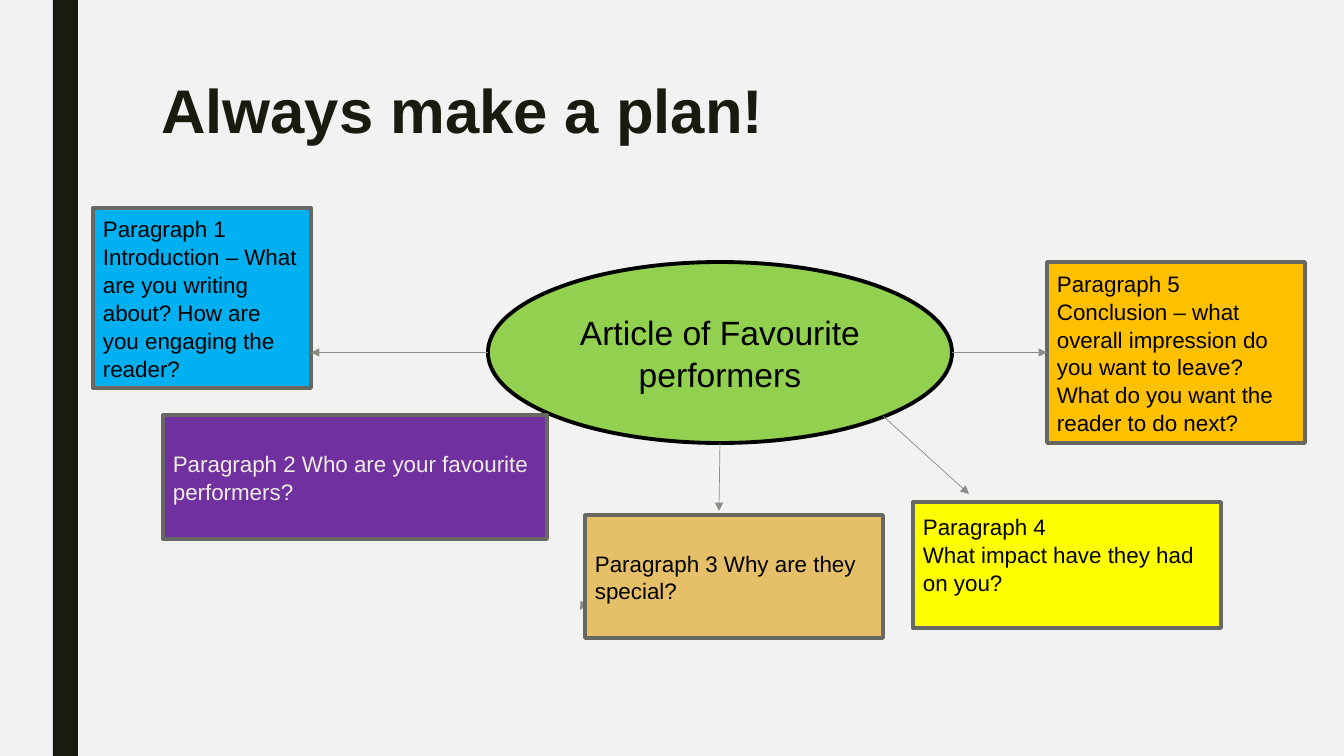
from pptx import Presentation
from pptx import util as u
from pptx.dml.color import RGBColor
from pptx.enum import shapes, text
from pptx.oxml.ns import qn
from lxml import etree

PAPER = RGBColor(0xF2, 0xF2, 0xF2)
DARK = RGBColor(0x19, 0x1B, 0x0E)
BLACK = RGBColor(0, 0, 0)
CREAM = RGBColor(0xEF, 0xED, 0xE3)
EDGE = RGBColor(0x68, 0x68, 0x63)
GREY = RGBColor(0x8C, 0x8D, 0x86)
GREEN = RGBColor(0x92, 0xD0, 0x50)
PURPLE = RGBColor(0x70, 0x30, 0xA0)
YELLOW = RGBColor(0xFF, 0xFF, 0)
TAN = RGBColor(0xE6, 0xC0, 0x69)
BLUE = RGBColor(0, 0xB0, 0xF0)
ORANGE = RGBColor(0xFF, 0xC0, 0)

RECT = shapes.MSO_SHAPE.RECTANGLE
OVAL = shapes.MSO_SHAPE.OVAL
LEFT, MID = text.PP_ALIGN.LEFT, text.PP_ALIGN.CENTER
TOP, CENTRE = text.MSO_ANCHOR.TOP, text.MSO_ANCHOR.MIDDLE

HUB = (488, 262, 464, 181)
NOTES = [
    ((163, 415, 384, 124), PURPLE, CREAM, CENTRE,
     "Paragraph 2 Who are your favourite performers?"),
    ((913, 502, 308, 126), YELLOW, BLACK, TOP,
     "Paragraph 4\nWhat impact have they had on you?"),
    ((585, 515, 298, 123), TAN, BLACK, CENTRE,
     "Paragraph 3 Why are they special?"),
    ((93, 208, 218, 180), BLUE, BLACK, CENTRE,
     "Paragraph 1\nIntroduction – What are you writing about? "
     "How are you engaging the reader?"),
    ((1047, 262, 258, 181), ORANGE, BLACK, CENTRE,
     "Paragraph 5\nConclusion – what overall impression do you want to leave? "
     "What do you want the reader to do next?"),
]


def px(*nums):
    """Turn whole pixels into EMU."""
    return [u.Inches(n / 100.8) for n in nums]


def style(frame, size, ink, align, gap, bold=False):
    """Format every paragraph and run of a text frame."""
    for par in frame.paragraphs:
        par.alignment = align
        par.line_spacing = gap
        for run in par.runs:
            run.font.name = "Arial"
            run.font.size = u.Pt(size)
            run.font.bold = bold
            run.font.color.rgb = ink


def block(slide, box, fill, edge=None, kind=RECT):
    """Draw a filled shape with an optional outline."""
    shape = slide.shapes.add_shape(kind, *px(*box))
    shape.shadow.inherit = False
    shape.fill.solid()
    shape.fill.fore_color.rgb = fill
    if edge is None:
        shape.line.fill.background()
    else:
        shape.line.color.rgb = edge
        shape.line.width = u.Pt(2.75)
    return shape


def label(shape, words, size, ink, align=LEFT, anchor=CENTRE):
    """Write text into a shape."""
    frame = shape.text_frame
    frame.word_wrap = True
    frame.vertical_anchor = anchor
    if anchor == TOP:
        frame.margin_top = px(10)[0]
    frame.text = words
    style(frame, size, ink, align, 1.04)


def arrow(slide, start, end):
    """Draw a thin grey arrow between two points."""
    line = slide.shapes.add_connector(
        shapes.MSO_CONNECTOR.STRAIGHT, *px(*start, *end))
    line.line.color.rgb = GREY
    line.line.width = u.Pt(0.5)
    tip = etree.SubElement(line.line._get_or_add_ln(), qn("a:tailEnd"))
    tip.set("type", "triangle")
    etree.SubElement(line._element.spPr, qn("a:effectLst"))
    return line


def head(slide, box):
    """Place and format the title."""
    title = slide.shapes.title
    title.left, title.top, title.width, title.height = px(*box)
    frame = title.text_frame
    frame.text = "Always make a plan!"
    frame.word_wrap = True
    frame.vertical_anchor = TOP
    style(frame, 44, DARK, LEFT, 0.89, True)


def plan(slide, box):
    """Draw the hub, its notes and the arrows between them."""
    x, y, w, h = box
    mid, base = x + w // 2, y + h
    level = y + h / 2
    hub = block(slide, box, GREEN, BLACK, OVAL)
    label(hub, "Article of Favourite performers", 24, BLACK, MID)
    arrow(slide, (mid - 96, base + 91), (mid - 140, base + 167))
    for place, fill, ink, anchor, words in NOTES:
        note = block(slide, place, fill, EDGE)
        label(note, words, 16, ink, anchor=anchor)
    arrow(slide, (x, level), (x - 177, level))
    arrow(slide, (mid, base), (mid - 1, base + 68))
    arrow(slide, (mid + 163, base - 27), (mid + 249, base + 51))
    last = arrow(slide, (x + w, level), (x + w + 95, level))
    last.end_connect(note, 1)


def main():
    """Build and save the slide."""
    deck = Presentation()
    deck.slide_width, deck.slide_height = px(1344, 756)
    slide = deck.slides.add_slide(deck.slide_layouts[5])
    slide.background.fill.solid()
    slide.background.fill.fore_color.rgb = PAPER
    block(slide, (53, 0, 25, 756), DARK)
    head(slide, (151, 76, 1058, 163))
    plan(slide, HUB)
    deck.save("out.pptx")


if __name__ == "__main__":
    main()
